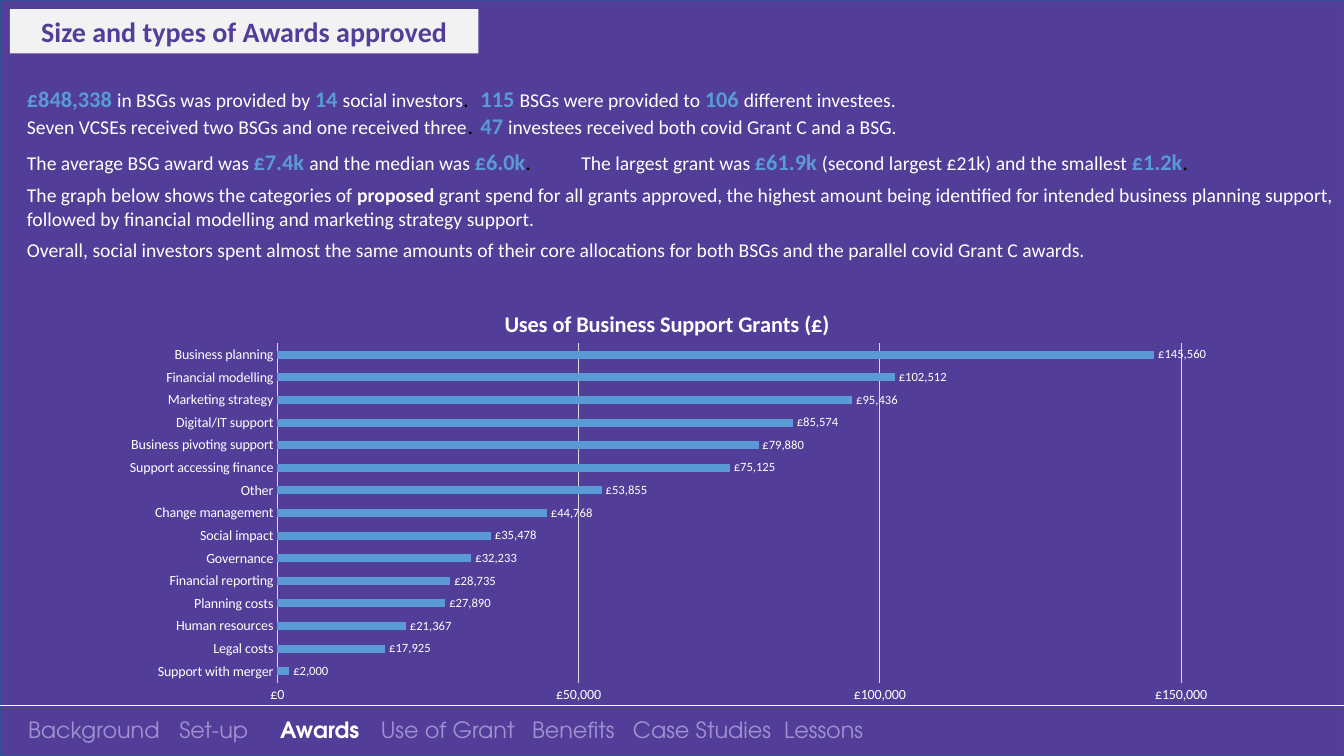
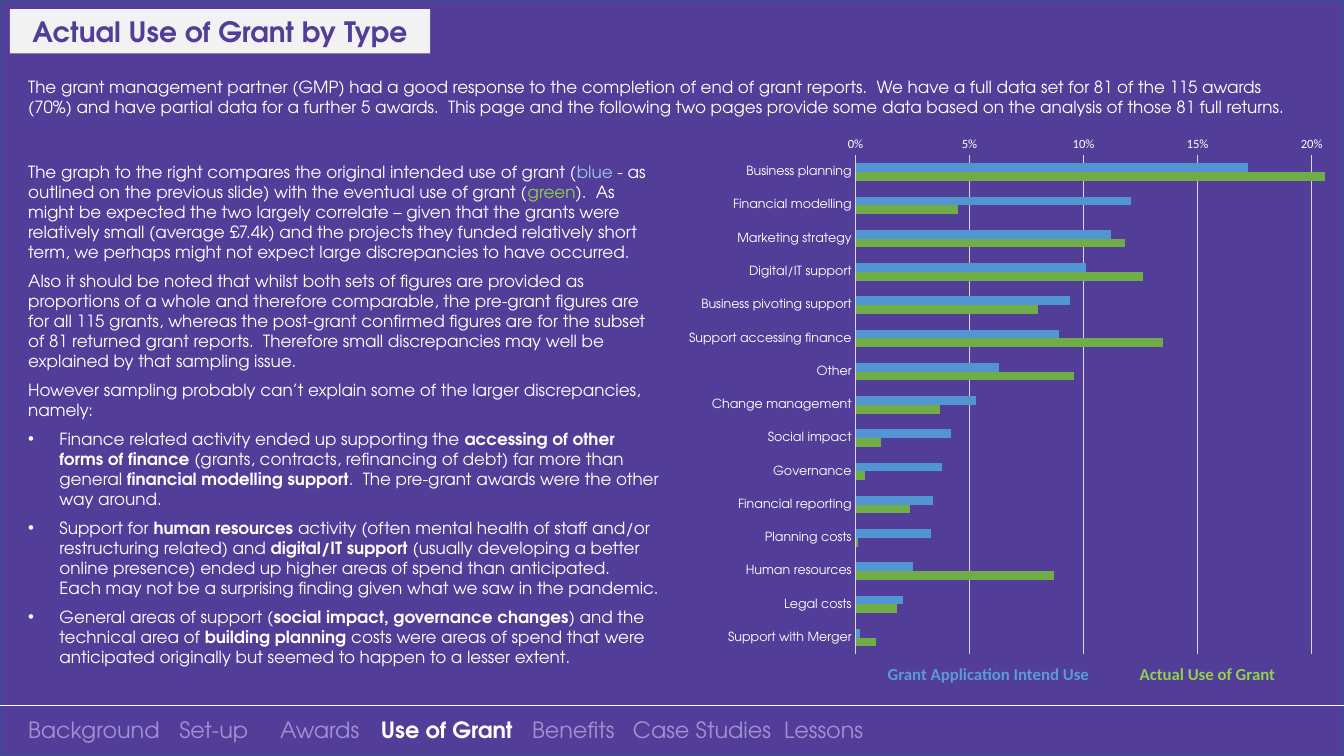
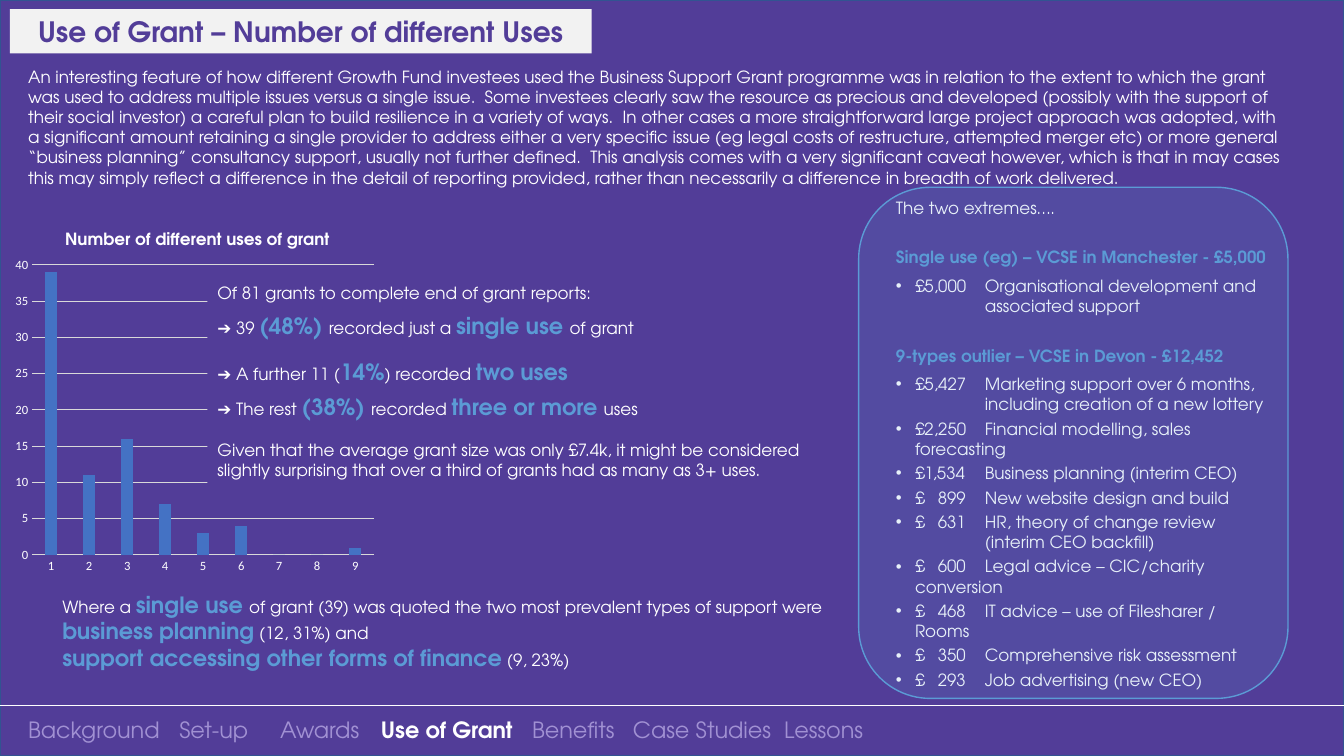
from lxml import etree
from pptx import Presentation
from pptx.chart.data import CategoryChartData
from pptx.dml.color import RGBColor
from pptx.enum import chart as ch, shapes, text
from pptx.oxml.ns import qn
from pptx.util import Cm, Pt

PURPLE = RGBColor(0x52, 0x3D, 0x98)
EDGE = RGBColor(0x32, 0x54, 0x91)
WHITE = RGBColor(0xFF, 0xFF, 0xFF)
BLACK = RGBColor(0, 0, 0)
PALE = RGBColor(0xF2, 0xF2, 0xF2)
MUTED = RGBColor(0xA1, 0x91, 0xD3)
GRID = RGBColor(0xD9, 0xD9, 0xD9)
BLUE = RGBColor(0x5B, 0x9B, 0xD5)
BAR_BLUE = RGBColor(0x51, 0x95, 0xD3)
BAR_GREEN = RGBColor(0x70, 0xAD, 0x47)
COLUMN_BLUE = RGBColor(0x44, 0x72, 0xC4)
LIGHT_BLUE = RGBColor(0x9D, 0xC3, 0xE6)
LIME = RGBColor(0x92, 0xD0, 0x50)

SANS, GEO = "Calibri", "TeX Gyre Adventor"
WIDTH, HEIGHT = 33.87, 19.05

NAV = [("Background", 0), ("Set-up", 5.32), ("Awards", 9.1), ("Use of Grant", 12.98),
       ("Benefits", 18.51), ("Case Studies", 22.6), ("Lessons", 28.27)]

BASE = {"name": GEO, "size": Pt(12), "bold": False, "color": WHITE}
CALIBRI = {**BASE, "name": SANS, "size": Pt(14)}
NAV_FONT = {**BASE, "size": Pt(16), "color": MUTED}
ACTIVE = {"bold": True, "color": WHITE}
BOLD = {"bold": True}
KEY = {"size": Pt(16), "bold": True, "color": BLUE}
DOT = {"size": Pt(16), "color": BLACK}
HEAD = {"bold": True, "color": BLUE}
GREEN_HEAD = {"bold": True, "color": LIME}

COLUMN_2 = {"tabs": [(15.24, "l")]}
BULLET = {"bullet": True, "left": 0.79, "hang": 0.79}
TIGHT = {"after": 0}
GAP = {"after": 14}

AWARDS_TEXT = [
    ([("£848,338 ", KEY), "in BSGs was provided by ", ("14 ", KEY), "social investors", (".\t", DOT),
      ("115 ", KEY), "BSGs were provided to ", ("106 ", KEY), "different investees."],
     {**COLUMN_2, **TIGHT}),
    (["Seven VCSEs received two BSGs and one received three", (".\t", DOT), ("47 ", KEY),
      "investees received both covid Grant C and a BSG."], COLUMN_2),
    (["The average BSG award was ", ("£7.4k ", KEY), "and the median was ", ("£6.0k", KEY),
      (".\t", DOT), "The largest grant was ", ("£61.9k ", KEY),
      "(second largest £21k) and the smallest ", ("£1.2k", KEY), (".", DOT)], COLUMN_2),
    (["The graph below shows the categories of ", ("proposed", BOLD),
      " grant spend for all grants approved, the highest amount being identified for intended "
      "business planning support, followed by financial modelling and marketing strategy support."], {}),
    (["Overall, social investors spent almost the same amounts of their core allocations for both "
      "BSGs and the parallel covid Grant C awards."], {}),
]

ACTUAL_INTRO = [
    (["The grant management partner (GMP) had a good response to the completion of end of grant "
      "reports.  We have a full data set for 81 of the 115 awards (70%) and have partial data for "
      "a further 5 awards.  This page and the following two pages provide some data based on the "
      "analysis of those 81 full returns."], {}),
]

ACTUAL_TEXT = [
    (["The graph to the right compares the original intended use of grant (",
      ("blue", {"color": LIGHT_BLUE}),
      " - as outlined on the previous slide) with the eventual use of grant (",
      ("green", {"color": LIME}),
      ").  As might be expected the two largely correlate – given that the grants were relatively "
      "small (average £7.4k) and the projects they funded relatively short term, we perhaps might "
      "not expect large discrepancies to have occurred."], {}),
    (["Also it should be noted that whilst both sets of figures are provided as proportions of a "
      "whole and therefore comparable, the pre-grant figures are for all 115 grants, whereas the "
      "post-grant confirmed figures are for the subset of 81 returned grant reports.  Therefore "
      "small discrepancies may well be explained by that sampling issue."], {}),
    (["However sampling probably can’t explain some of the larger discrepancies, namely:"], {}),
    (["Finance related activity ended up supporting the ",
      ("accessing of other forms of finance", BOLD),
      " (grants, contracts, refinancing of debt) far more than general ",
      ("financial modelling support", BOLD),
      ".  The pre-grant awards were the other way around."], BULLET),
    (["Support for ", ("human resources ", BOLD),
      "activity (often mental health of staff and/or restructuring related) and ",
      ("digital/IT support ", BOLD),
      "(usually developing a better online presence) ended up higher areas of spend than "
      "anticipated.  Each may not be a surprising finding given what we saw in the pandemic."], BULLET),
    (["General areas of support (", ("social impact, governance changes", BOLD),
      ") and the technical area of ", ("building planning ", BOLD),
      "costs were areas of spend that were anticipated originally but seemed to happen to a "
      "lesser extent."], BULLET),
]

ACTUAL_KEY = [([("Grant Application Intend Use\t", HEAD), ("Actual Use of Grant", GREEN_HEAD)],
               {"tabs": [(6.02, "l")]})]

NUMBER_INTRO = [
    (["An interesting feature of how different Growth Fund investees used the Business Support "
      "Grant programme was in relation to the extent to which the grant was used to address "
      "multiple issues versus a single issue.  Some investees clearly saw the resource as precious "
      "and developed (possibly with the support of their social investor) a careful plan to build "
      "resilience in a variety of ways.  ",
      "In other cases a more straightforward large project "
      "approach was adopted, with a significant amount retaining a single provider to address "
      "either a very specific issue (eg legal costs of restructure, attempted merger etc) or more "
      "general “business planning” consultancy support, usually not further defined.  ",
      "This analysis comes with a very significant caveat however, which is that in may cases this "
      "may simply reflect a difference in the detail of reporting provided, rather than "
      "necessarily a difference in breadth of work delivered."], {}),
]

NUMBER_FINDINGS = [
    (["Of 81 grants to complete end of grant reports:"], {}),
    (["➔ 39 ", ("(48%) ", KEY), "recorded just a ", ("single use ", KEY), "of grant"], GAP),
    (["➔ A further 11 (", ("14%", KEY), ") recorded ", ("two uses", KEY)], {}),
    (["➔ The rest ", ("(38%) ", KEY), "recorded ", ("three or more ", KEY), "uses"], GAP),
    (["Given that the average grant size was only £7.4k, it might be considered slightly "
      "surprising that over a third of grants had as many as 3+ uses."], {}),
]

NUMBER_TYPES = [
    (["Where a ", ("single use ", KEY),
      "of grant (39) was quoted the two most prevalent types of support were ",
      ("business planning", KEY), " (12, 31%) and"], TIGHT),
    ([("support accessing other forms of finance", KEY), " (9, 23%)"], {}),
]

AMOUNT_LEFT, USE_LEFT, AMOUNT_RIGHT = 0.48, 2.24, 1.76
SINGLE_USE = [("£5,000", "Organisational development and", "associated support", USE_LEFT)]
NINE_USES = [
    ("£5,427", "Marketing support over 6 months,", "including creation of a new lottery", USE_LEFT),
    ("£2,250", "Financial modelling, sales", "forecasting", AMOUNT_LEFT),
    ("£1,534", "Business planning (interim CEO)", "", 0),
    ("£\t899", "New website design and build", "", 0),
    ("£\t631", "HR, theory of change review", "(interim CEO backfill)", USE_LEFT),
    ("£\t600", "Legal advice – CIC/charity", "conversion", AMOUNT_LEFT),
    ("£\t468", "IT advice – use of Filesharer /", "Rooms", AMOUNT_LEFT),
    ("£\t350", "Comprehensive risk assessment", "", 0),
    ("£\t293", "Job advertising (new CEO)", "", 0),
]

USES = ["Business planning", "Financial modelling", "Marketing strategy", "Digital/IT support",
        "Business pivoting support", "Support accessing finance", "Other", "Change management",
        "Social impact", "Governance", "Financial reporting", "Planning costs", "Human resources",
        "Legal costs"]
AMOUNTS = [145560, 102512, 95436, 85574, 79880, 75125, 53855, 44768, 35478, 32233, 28735, 27890,
           21367, 17925, 2000]
INTENDED = [0.172, 0.121, 0.112, 0.101, 0.094, 0.089, 0.063, 0.053, 0.042, 0.038, 0.034, 0.033,
            0.025, 0.021, 0.002]
ACTUAL = [0.206, 0.045, 0.118, 0.126, 0.08, 0.135, 0.096, 0.037, 0.011, 0.004, 0.024, 0.001,
          0.087, 0.018, 0.009]
POUNDS = '"£"#,##0'

AWARDS_CHART = {
    "kind": ch.XL_CHART_TYPE.BAR_CLUSTERED, "at": (2.77, 7.14, 28.12, 10.82),
    "cats": (USES + ["Support with merger"])[::-1], "series": [(AMOUNTS[::-1], BLUE)],
    "title": ("Uses of Business Support Grants (£)", SANS, 16, (0.35, 0.05)),
    "plot": (0.15, 0.14, 0.81, 0.79), "scale": (150000, 50000), "format": POUNDS,
    "cat_font": (SANS, 10), "val_font": (SANS, 10), "gap": 182, "overlap": 0, "labels": True,
}
ACTUAL_CHART = {
    "kind": ch.XL_CHART_TYPE.BAR_CLUSTERED, "at": (16.94, 3.1, 19.66, 13.61),
    "cats": USES + ["Support with Merger"],
    "series": [(INTENDED, BAR_BLUE), (ACTUAL, BAR_GREEN)],
    "plot": (0.235, 0.06, 0.731, 0.924), "scale": (0.25, 0.05), "format": "0%",
    "cat_font": (GEO, 9), "val_font": (SANS, 9), "gap": 182, "overlap": 0, "reverse": True,
}
NUMBER_CHART = {
    "kind": ch.XL_CHART_TYPE.COLUMN_CLUSTERED, "at": (0.25, 5.38, 9.37, 9.25),
    "cats": [str(n) for n in range(1, 10)],
    "series": [([39, 11, 16, 7, 3, 4, 0, 0, 1], COLUMN_BLUE)],
    "title": ("Number of different uses of grant", GEO, 12, (0.14, 0.04)),
    "plot": (0.06, 0.14, 0.92, 0.79), "scale": (40, 5), "format": "General",
    "cat_font": (SANS, 9), "val_font": (SANS, 9), "gap": 219, "overlap": -27,
}


def set_font(font, fmt):
    for key, value in fmt.items():
        if key == "color":
            font.color.rgb = value
        else:
            setattr(font, key, value)


def write(sp, paragraphs, base=BASE, anchor=text.MSO_ANCHOR.TOP, align=text.PP_ALIGN.LEFT):
    tf = sp.text_frame
    tf.word_wrap = True
    tf.vertical_anchor = anchor
    for i, (runs, opts) in enumerate(paragraphs):
        p = tf.paragraphs[0] if i == 0 else tf.add_paragraph()
        p.alignment = align
        p.space_before = Pt(opts.get("before", 0))
        p.space_after = Pt(opts.get("after", 6))
        pr = p._p.get_or_add_pPr()
        pr.set("marL", str(Cm(opts.get("left", 0))))
        pr.set("indent", str(-Cm(opts.get("hang", 0))))
        if opts.get("bullet"):
            etree.SubElement(pr, qn("a:buFont"), typeface="Arial")
            etree.SubElement(pr, qn("a:buChar"), char="•")
        if opts.get("tabs"):
            stops = etree.SubElement(pr, qn("a:tabLst"))
            for pos, side in opts["tabs"]:
                etree.SubElement(stops, qn("a:tab"), pos=str(Cm(pos)), algn=side)
        for run in runs:
            words, fmt = (run, {}) if isinstance(run, str) else run
            r = p.add_run()
            r.text = words
            set_font(r.font, {**base, **fmt})


def add_text(s, at, paragraphs, base=BASE):
    write(s.shapes.add_textbox(*map(Cm, at)), paragraphs, base)


def add_box(s, at, fill, line=None, kind=shapes.MSO_SHAPE.RECTANGLE):
    sp = s.shapes.add_shape(kind, *map(Cm, at))
    sp.shadow.inherit = False
    sp.fill.solid()
    sp.fill.fore_color.rgb = fill
    if line is None:
        sp.line.fill.background()
    else:
        sp.line.color.rgb = line
        sp.line.width = Pt(1)
    return sp


def add_frame(prs, active):
    s = prs.slides.add_slide(prs.slide_layouts[6])
    add_box(s, (0, 0, WIDTH, HEIGHT), PURPLE, EDGE)
    rule = s.shapes.add_connector(shapes.MSO_CONNECTOR.STRAIGHT, 0, Cm(17.78), Cm(WIDTH), Cm(17.78))
    rule.line.color.rgb = WHITE
    rule.line.width = Pt(0.5)
    etree.SubElement(rule._element.spPr, qn("a:effectLst"))
    runs = [("\t" * (i > 0) + name, ACTIVE if name == active else {})
            for i, (name, _) in enumerate(NAV)]
    tabs = [(pos, "l") for _, pos in NAV[1:]]
    add_text(s, (0.46, 17.91, 33.15, 0.94), [(runs, {"tabs": tabs, "after": 0})], NAV_FONT)
    return s


def add_title(s, words, width, name=GEO):
    sp = add_box(s, (0.25, 0.23, width, 1.12), PALE)
    write(sp, [([words], TIGHT)], {"name": name, "size": Pt(20), "bold": True, "color": PURPLE},
          text.MSO_ANCHOR.MIDDLE, text.PP_ALIGN.CENTER)


def set_layout(parent, index, **values):
    for old in parent.findall(qn("c:layout")):
        parent.remove(old)
    layout = etree.Element(qn("c:layout"))
    parent.insert(index, layout)
    manual = etree.SubElement(layout, qn("c:manualLayout"))
    for key, value in values.items():
        etree.SubElement(manual, qn("c:" + key), val=str(value))


def add_graph(s, d):
    data = CategoryChartData()
    data.categories = d["cats"]
    for i, (values, _) in enumerate(d["series"], 1):
        data.add_series(f"Series {i}", values)
    chart = s.shapes.add_chart(d["kind"], *map(Cm, d["at"]), data).chart
    set_font(chart.font, {"name": SANS, "size": Pt(10), "color": BLACK})
    chart.has_legend = False
    chart.has_title = "title" in d
    if chart.has_title:
        words, name, size, (x, y) = d["title"]
        p = chart.chart_title.text_frame.paragraphs[0]
        r = p.add_run()
        r.text = words
        set_font(r.font, {"name": name, "size": Pt(size), "bold": True, "color": WHITE})
        set_layout(chart.element.find(".//" + qn("c:title")), 1, xMode="edge", yMode="edge", x=x, y=y)
    x, y, w, h = d["plot"]
    set_layout(chart.element.find(".//" + qn("c:plotArea")), 0, layoutTarget="inner",
               xMode="edge", yMode="edge", x=x, y=y, w=w, h=h)

    cat, val = chart.category_axis, chart.value_axis
    for axis, (name, size) in ((cat, d["cat_font"]), (val, d["val_font"])):
        axis.major_tick_mark = axis.minor_tick_mark = ch.XL_TICK_MARK.NONE
        set_font(axis.tick_labels.font, {"name": name, "size": Pt(size), "color": WHITE})
    cat.has_major_gridlines = False
    cat.reverse_order = d.get("reverse", False)
    val.has_major_gridlines = True
    val.minimum_scale = 0
    val.maximum_scale, val.major_unit = d["scale"]
    val.tick_labels.number_format = d["format"]
    val.tick_labels.number_format_is_linked = False
    val.format.line.fill.background()
    for line in (cat.format.line, val.major_gridlines.format.line):
        line.color.rgb = GRID
        line.width = Pt(0.75)

    plot = chart.plots[0]
    plot.vary_by_categories = False
    plot.gap_width = d["gap"]
    plot.overlap = d["overlap"]
    for series, (_, color) in zip(plot.series, d["series"]):
        series.format.fill.solid()
        series.format.fill.fore_color.rgb = color
    if d.get("labels"):
        plot.has_data_labels = True
        labels = plot.data_labels
        labels.show_value = True
        labels.number_format = d["format"]
        labels.number_format_is_linked = False
        labels.position = ch.XL_LABEL_POSITION.OUTSIDE_END
        set_font(labels.font, {"name": SANS, "size": Pt(9), "color": WHITE})


def spend_list(items, after):
    paragraphs = []
    for amount, first, second, left in items:
        tabs = [(AMOUNT_RIGHT, "r")] * ("\t" in amount) + [(USE_LEFT, "l")]
        paragraphs.append(([f"{amount}\t{first}"],
                           {"bullet": True, "left": AMOUNT_LEFT, "hang": AMOUNT_LEFT,
                            "tabs": tabs, "after": 0 if second else after}))
        if second:
            paragraphs.append(([second], {"left": left, "after": after}))
    return paragraphs


def awards_slide(prs):
    s = add_frame(prs, "Awards")
    add_text(s, (0.43, 2.03, 33.6, 4.93), AWARDS_TEXT, CALIBRI)
    add_graph(s, AWARDS_CHART)
    add_title(s, "Size and types of Awards approved", 11.81, SANS)


def actual_slide(prs):
    s = add_frame(prs, "Use of Grant")
    add_text(s, (0.46, 1.8, 32.77, 1.27), ACTUAL_INTRO)
    add_graph(s, ACTUAL_CHART)
    add_text(s, (0.46, 3.94, 16.46, 13.64), ACTUAL_TEXT)
    add_title(s, "Actual Use of Grant by Type", 10.59)
    add_text(s, (22.12, 16.61, 11, 0.76), ACTUAL_KEY, {**BASE, "name": SANS})


def number_slide(prs):
    s = add_frame(prs, "Use of Grant")
    add_text(s, (0.46, 1.55, 32.33, 3.33), NUMBER_INTRO)
    add_graph(s, NUMBER_CHART)
    add_text(s, (1.32, 14.76, 20.04, 2.31), NUMBER_TYPES)
    heading = {"before": 15}
    extremes = [(["The two extremes…."], {}),
                ([("Single use (eg) – VCSE in Manchester - £5,000", HEAD)], heading),
                *spend_list(SINGLE_USE, 6),
                ([("9-types outlier – VCSE in Devon - £12,452", HEAD)], heading),
                *spend_list(NINE_USES, 3)]
    add_text(s, (22.33, 4.85, 10.31, 12.83), extremes)
    add_title(s, "Use of Grant – Number of different Uses", 14.66)
    panel = add_box(s, (21.64, 4.72, 10.82, 12.88), BLUE, BLUE, shapes.MSO_SHAPE.ROUNDED_RECTANGLE)
    tint = panel._element.spPr.find(qn("a:solidFill"))[0]
    etree.SubElement(tint, qn("a:alpha"), val="15000")
    write(add_box(s, (5.23, 7.01, 15.88, 5.31), PURPLE), NUMBER_FINDINGS)


def main():
    prs = Presentation()
    prs.slide_width, prs.slide_height = Cm(WIDTH), Cm(HEIGHT)
    awards_slide(prs)
    actual_slide(prs)
    number_slide(prs)
    prs.save("out.pptx")


if __name__ == "__main__":
    main()
